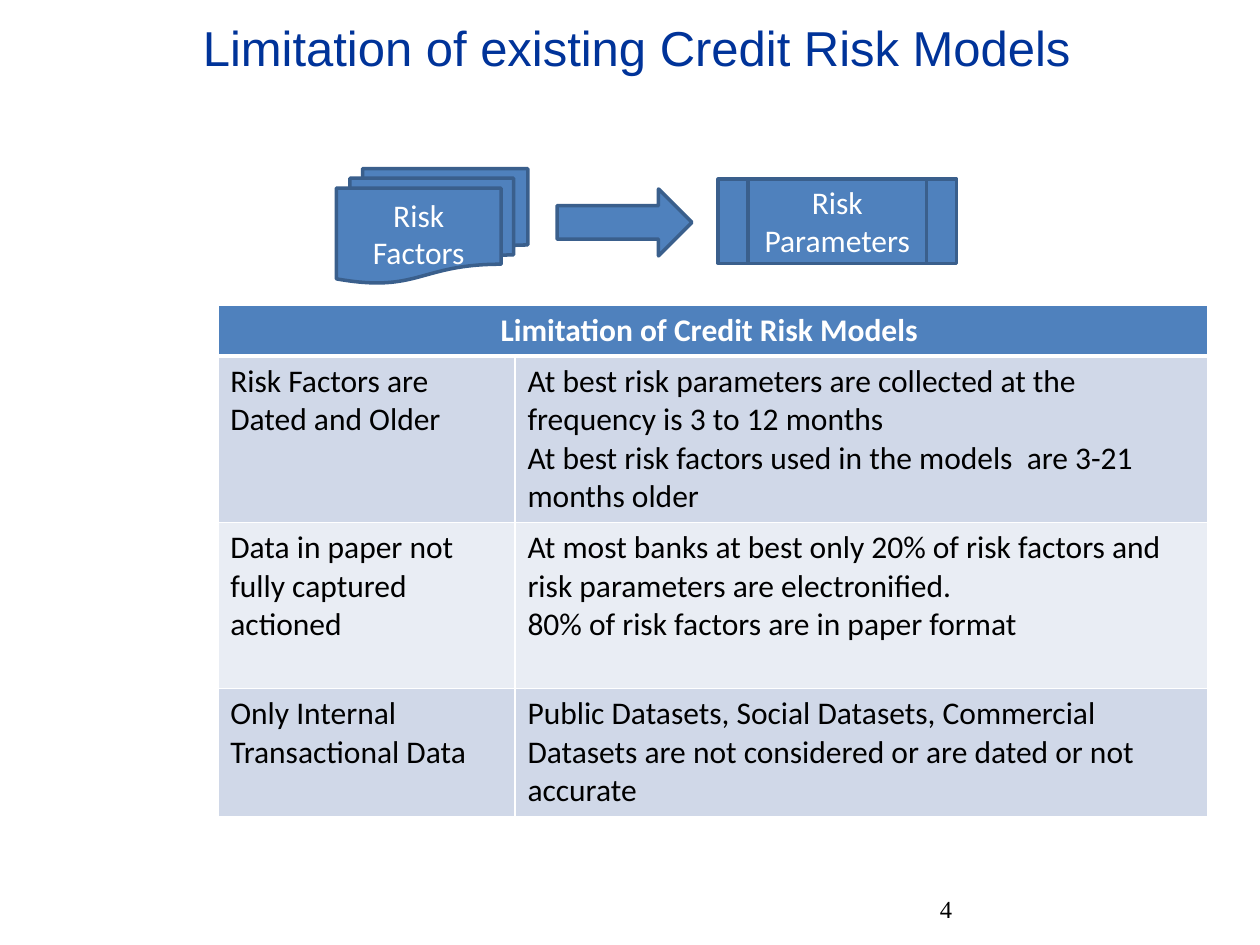
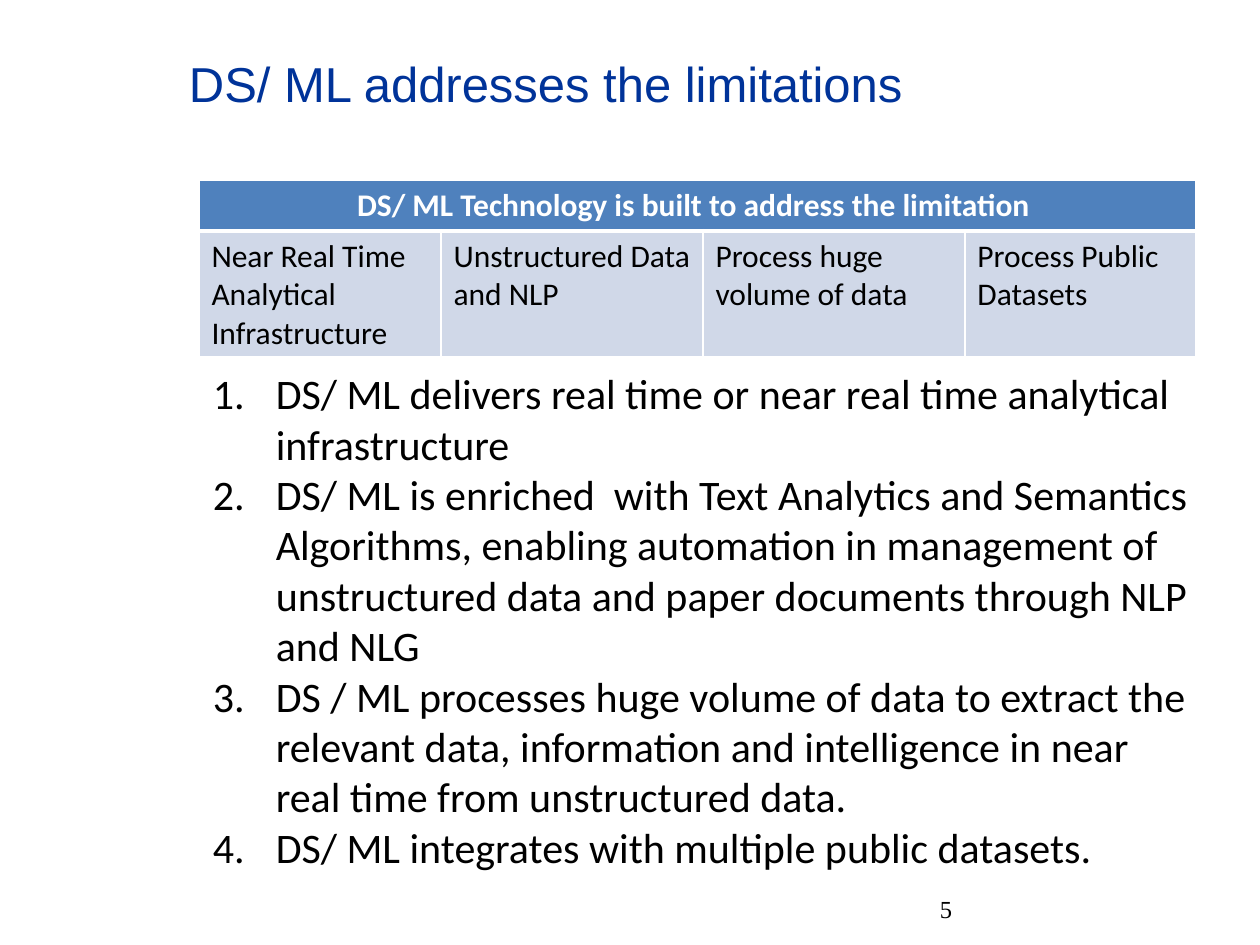
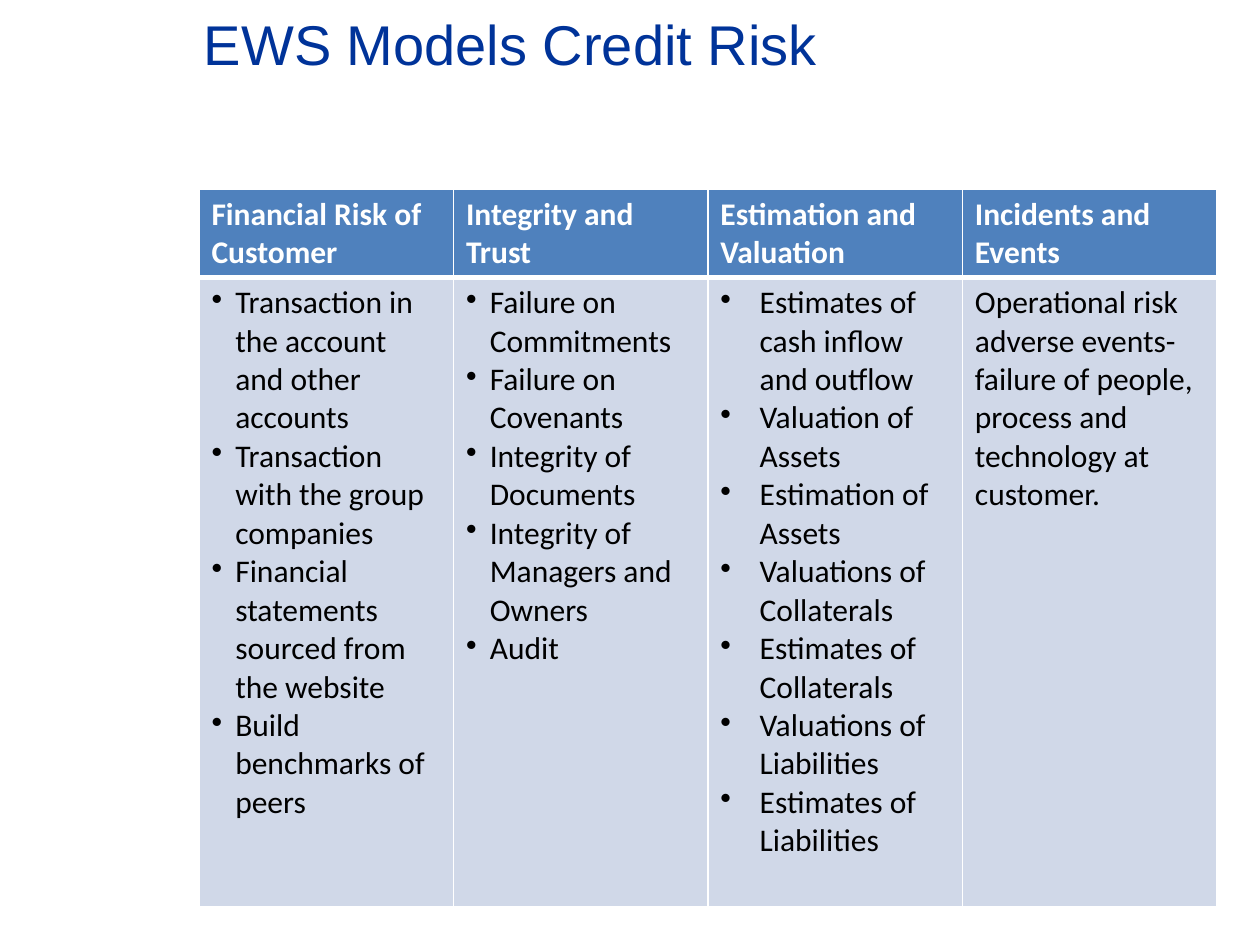
"""Build three slides on the limits of credit risk models and how DS/ML answers them."""
from typing import Any, NamedTuple, Optional

from lxml import etree
from pptx import Presentation
from pptx.dml.color import RGBColor
from pptx.enum import shapes, text
from pptx.oxml import ns
from pptx.util import Cm, Pt

NAVY = RGBColor(0x00, 0x33, 0x99)
BLUE = RGBColor(0x4F, 0x81, 0xBD)
EDGE = RGBColor(0x3A, 0x5F, 0x8C)
BAND = RGBColor(0xD0, 0xD8, 0xE8)
PALE = RGBColor(0xE9, 0xED, 0xF4)
WHITE = RGBColor(0xFF, 0xFF, 0xFF)
BLACK = RGBColor(0x00, 0x00, 0x00)

TITLE = {"name": "Arial", "size": Pt(28), "color": NAVY}
BIG_TITLE = {**TITLE, "size": Pt(32)}
NUMBER = {"name": "Times New Roman", "size": Pt(14), "color": BLACK}
LIST = {"name": "Calibri", "size": Pt(24), "color": BLACK}
CELL = {"name": "Calibri", "size": Pt(18), "color": BLACK, "bold": False}
HEADER = {**CELL, "color": WHITE, "bold": True}
LABEL = {**CELL, "color": WHITE}


class Box(NamedTuple):
    """A rectangle in centimetres."""
    left: float
    top: float
    width: float
    height: float

    def lengths(self) -> list[Cm]:
        """Return the four sides as lengths."""
        return [Cm(v) for v in self]


class Bullet(NamedTuple):
    """A list marker: its element, attribute, value and hanging indent in centimetres."""
    tag: str
    attr: str
    value: str
    indent: float


class Copy(NamedTuple):
    """Paragraphs that share one list marker."""
    lines: list[str]
    bullet: Optional[Bullet] = None


class Block(NamedTuple):
    """A preset shape with its label."""
    kind: shapes.MSO_SHAPE
    box: Box
    label: str = ""


class Grid(NamedTuple):
    """A table: corner, column widths and row heights in centimetres, and its rows."""
    left: float
    top: float
    cols: list[float]
    heights: list[float]
    rows: list[list[Copy]]


NUMBERED = Bullet("a:buAutoNum", "type", "arabicPeriod", 1.27)
DOT = Bullet("a:buChar", "char", "•", 0.48)
WIDE_DOT = DOT._replace(indent=0.79)
NUMBER_BOX = Box(18.95, 18.03, 5.38, 1.02)

BLOCKS = [
    Block(shapes.MSO_SHAPE.FLOWCHART_MULTIDOCUMENT, Box(6.78, 3.4, 3.86, 2.31), "Risk Factors"),
    Block(shapes.MSO_SHAPE.FLOWCHART_PREDEFINED_PROCESS, Box(14.48, 3.61, 4.8, 1.7), "Risk Parameters"),
    Block(shapes.MSO_SHAPE.RIGHT_ARROW, Box(11.23, 3.81, 2.72, 1.35)),
]

LIMITATIONS = Grid(4.39, 6.15, [5.99, 13.97], [1.03, 3.35, 3.35, 2.58], [
    [Copy(["Limitation of Credit Risk Models "])],
    [Copy(["Risk Factors are Dated and Older"]),
     Copy(["At best risk parameters are collected at the frequency is 3 to 12 months",
           "At best risk factors used in the models  are 3-21 months older"])],
    [Copy(["Data in paper not fully captured actioned"]),
     Copy(["At most banks at best only 20% of risk factors and risk parameters are electronified.",
           "80% of risk factors are in paper format"])],
    [Copy(["Only Internal Transactional Data"]),
     Copy(["Public Datasets, Social Datasets, Commercial Datasets are not considered "
           "or are dated or not accurate"])],
])

TECHNOLOGY = Grid(4.01, 3.63, [4.88, 5.28, 5.28, 4.65], [1.03, 2.52], [
    [Copy(["DS/ ML Technology is built to address the limitation "])],
    [Copy(["Near Real Time Analytical Infrastructure"]),
     Copy(["Unstructured Data and NLP"]),
     Copy(["Process huge volume of data"]),
     Copy(["Process Public Datasets"])],
])

ANSWERS = Copy([
    "DS/ ML delivers real time or near real time analytical  infrastructure",
    "DS/ ML is enriched  with Text Analytics and Semantics Algorithms, enabling automation in "
    "management of unstructured data and paper documents through NLP and NLG",
    "DS / ML processes huge volume of data to extract the relevant data, information and "
    "intelligence in near real time from unstructured data.",
    "DS/ ML integrates with multiple public datasets.",
], NUMBERED)

WARNINGS = Grid(4.01, 3.81, [5.13] * 4, [1.77, 12.68], [
    [Copy(["Financial Risk of Customer"]), Copy(["Integrity and Trust"]),
     Copy(["Estimation and Valuation"]), Copy(["Incidents and Events"])],
    [Copy(["Transaction in the account and other accounts",
           "Transaction with the group companies",
           "Financial statements sourced from the website",
           "Build benchmarks of peers"], DOT),
     Copy(["Failure on Commitments", "Failure on  Covenants", "Integrity of  Documents",
           "Integrity of Managers and Owners", "Audit"], DOT),
     Copy(["Estimates of cash inflow and outflow", "Valuation of Assets", "Estimation of Assets",
           "Valuations of Collaterals", "Estimates of Collaterals",
           "Valuations of Liabilities", "Estimates of Liabilities"], WIDE_DOT),
     Copy(["Operational risk adverse events- failure of people, process and technology at customer."])],
])


def write(tf: Any, copy: Copy, style: dict[str, Any], align: Optional[text.PP_ALIGN] = None) -> None:
    """Fill a text frame with styled paragraphs."""
    for i, line in enumerate(copy.lines):
        p = tf.add_paragraph() if i else tf.paragraphs[0]
        if copy.bullet:
            pPr = p._p.get_or_add_pPr()
            indent = Cm(copy.bullet.indent)
            pPr.set("marL", str(indent))
            pPr.set("indent", str(-indent))
            etree.SubElement(pPr, ns.qn(copy.bullet.tag)).set(copy.bullet.attr, copy.bullet.value)
        p.alignment = align
        r = p.add_run()
        r.text = line
        for key, value in style.items():
            if key == "color":
                r.font.color.rgb = value
            else:
                setattr(r.font, key, value)


def add_text(s: Any, box: Box, copy: Copy, style: dict[str, Any], inset: bool = False) -> None:
    """Add a wrapping text box, with or without inner margins."""
    tf = s.shapes.add_textbox(*box.lengths()).text_frame
    tf.word_wrap = True
    if not inset:
        for side in ("left", "top", "right", "bottom"):
            setattr(tf, f"margin_{side}", 0)
    write(tf, copy, style)


def add_block(s: Any, block: Block) -> None:
    """Add a labelled preset shape."""
    sp = s.shapes.add_shape(block.kind, *block.box.lengths())
    sp.shadow.inherit = False
    sp.fill.solid()
    sp.fill.fore_color.rgb = BLUE
    sp.line.color.rgb = EDGE
    sp.line.width = Pt(2)
    if block.label:
        sp.text_frame.vertical_anchor = text.MSO_ANCHOR.MIDDLE
        write(sp.text_frame, Copy([block.label]), LABEL, text.PP_ALIGN.CENTER)


def set_borders(cell: Any, top: int, bottom: int) -> None:
    """Give a cell white borders, one point wide at the sides."""
    tcPr = cell._tc.get_or_add_tcPr()
    for i, (side, width) in enumerate(zip("LRTB", (1, 1, top, bottom))):
        ln = etree.Element(ns.qn(f"a:ln{side}"), w=str(Pt(width)))
        fill = etree.SubElement(ln, ns.qn("a:solidFill"))
        etree.SubElement(fill, ns.qn("a:srgbClr"), val=str(WHITE))
        tcPr.insert(i, ln)


def add_grid(s: Any, grid: Grid) -> None:
    """Add a banded table whose header spans all columns when it has one cell."""
    box = Box(grid.left, grid.top, sum(grid.cols), sum(grid.heights))
    table = s.shapes.add_table(len(grid.rows), len(grid.cols), *box.lengths()).table
    for col, width in zip(table.columns, grid.cols):
        col.width = Cm(width)
    for row, height in zip(table.rows, grid.heights):
        row.height = Cm(height)
    spanning = len(grid.rows[0]) == 1
    if spanning:
        table.cell(0, 0).merge(table.cell(0, len(grid.cols) - 1))
    for i, row in enumerate(grid.rows):
        for cell in table.rows[i].cells:
            cell.fill.solid()
            cell.fill.fore_color.rgb = (BAND if i % 2 else PALE) if i else BLUE
            set_borders(cell, 3 if i == 1 else 1, 1 if i else 3)
        for j, copy in enumerate(row):
            align = text.PP_ALIGN.CENTER if spanning and i == 0 else None
            write(table.cell(i, j).text_frame, copy, CELL if i else HEADER, align)


def add_slide(prs: Any, title: str, box: Box, style: dict[str, Any], number: str = "") -> Any:
    """Add a blank slide with its title and page number."""
    s = prs.slides.add_slide(prs.slide_layouts[6])
    add_text(s, box, Copy([title]), style)
    if number:
        add_text(s, NUMBER_BOX, Copy([number]), NUMBER)
    return s


def main() -> None:
    """Build and save the slides."""
    prs = Presentation()
    prs.slide_width, prs.slide_height = Cm(25.4), Cm(19.05)

    s = add_slide(prs, "Limitation of existing Credit Risk Models",
                  Box(4.09, 0.36, 18.34, 2.26), TITLE, "4")
    for block in BLOCKS:
        add_block(s, block)
    add_grid(s, LIMITATIONS)

    s = add_slide(prs, "DS/ ML addresses the limitations",
                  Box(3.81, 1.07, 17.98, 2.34), TITLE, "5")
    add_text(s, Box(4.04, 7.29, 20.32, 10.52), ANSWERS, LIST, inset=True)
    add_grid(s, TECHNOLOGY)

    s = add_slide(prs, "EWS Models Credit Risk", Box(4.11, 0.2, 17.05, 1.37), BIG_TITLE)
    add_grid(s, WARNINGS)

    prs.save("out.pptx")


if __name__ == "__main__":
    main()
